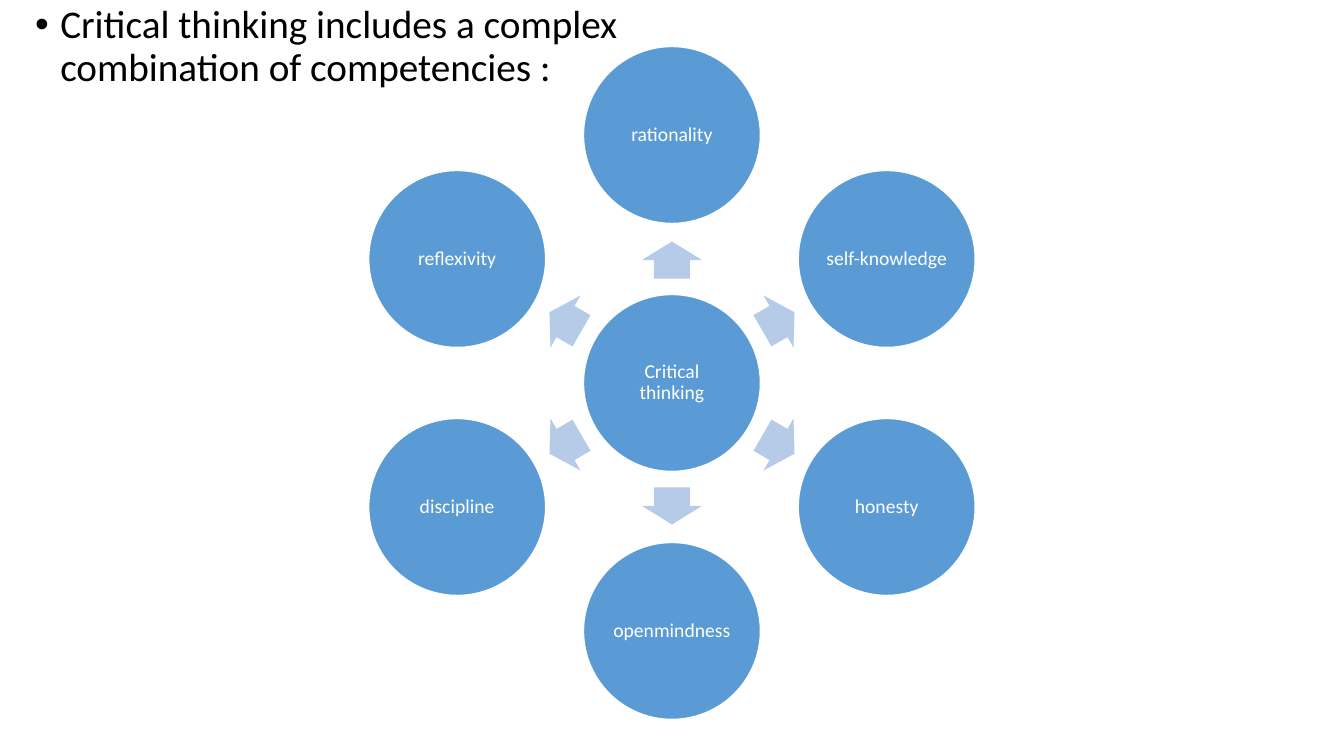
import math

from pptx import Presentation
from pptx import util as u
from pptx.dml.color import RGBColor
from pptx.enum import shapes, text
from pptx.oxml import parse_xml
from pptx.oxml.ns import nsdecls

BLUE = RGBColor(0x5B, 0x9B, 0xD5)
PALE = RGBColor(0xB5, 0xCB, 0xE7)
WHITE = RGBColor(0xFF, 0xFF, 0xFF)
BLACK = RGBColor(0x00, 0x00, 0x00)

WIDE, HIGH = 1344, 756
SCALE = 12192000 / WIDE  # EMU in one px
MID = (672, 383)
DISC = 177  # diameter of a circle
RING = 248  # centre to outer circles
GAP = 123  # centre to arrows
ARROW = (37, 60)
SKILLS = ["rationality", "self-knowledge", "honesty",
          "openmindness", "discipline", "reflexivity"]

LEAD = {"line_spacing": 0.9, "space_before": u.Pt(10)}
LABEL = {"line_spacing": 0.9, "alignment": text.PP_ALIGN.CENTER}
INNER = {"word_wrap": True, "vertical_anchor": text.MSO_ANCHOR.MIDDLE,
         "margin_left": u.Inches(0.02), "margin_right": u.Inches(0.02),
         "margin_top": u.Inches(0.02), "margin_bottom": u.Inches(0.02)}


def px(n):
    return u.Emu(round(n * SCALE))


def apply(item, style):
    for key, value in style.items():
        setattr(item, key, value)


def write(frame, words, style, size, color):
    para = frame.paragraphs[0]
    apply(para, style)
    run = para.add_run()
    run.text = words
    apply(run.font, {"name": "Calibri", "size": u.Pt(size)})
    run.font.color.rgb = color
    return para


def add_lead(slide, words):
    body = slide.placeholders[1]
    apply(body, {"left": px(25), "top": px(0),
                 "width": px(706), "height": px(383)})
    body.text_frame.vertical_anchor = text.MSO_ANCHOR.TOP
    para = write(body.text_frame, words, LEAD, 28, BLACK)
    props = para._p.get_or_add_pPr()
    props.set("marL", str(u.Inches(0.25)))
    props.set("indent", str(-u.Inches(0.25)))
    props.append(parse_xml(f'<a:buChar {nsdecls("a")} char="•"/>'))


def add_form(slide, kind, spot, size, fill):
    """Add a filled preset shape centred on spot."""
    (x, y), (w, h) = spot, size
    form = slide.shapes.add_shape(
        kind, px(x - w / 2), px(y - h / 2), px(w), px(h))
    form.shadow.inherit = False
    form.fill.solid()
    form.fill.fore_color.rgb = fill
    return form


def add_disc(slide, spot, words):
    disc = add_form(slide, shapes.MSO_SHAPE.OVAL, spot, (DISC, DISC), BLUE)
    disc.line.color.rgb = WHITE
    disc.line.width = u.Pt(1)
    apply(disc.text_frame, INNER)
    write(disc.text_frame, words, LABEL, 14, WHITE)


def add_arrow(slide, spot, angle):
    arrow = add_form(slide, shapes.MSO_SHAPE.RIGHT_ARROW, spot, ARROW, PALE)
    arrow.line.fill.background()
    arrow.adjustments[0] = 0.6
    arrow.adjustments[1] = 0.5
    arrow.rotation = angle


def polar(angle, reach):
    turn = math.radians(angle)
    return (MID[0] + reach * math.cos(turn), MID[1] + reach * math.sin(turn))


def main():
    deck = Presentation()
    deck.slide_width, deck.slide_height = px(WIDE), px(HIGH)
    slide = deck.slides.add_slide(deck.slide_layouts[1])
    title = slide.shapes.title.element
    title.getparent().remove(title)

    # Lead sentence
    add_lead(slide, "Critical thinking includes a complex "
                    "combination of competencies :")

    # Hub, then arrows and circles clockwise from the top
    add_disc(slide, MID, "Critical thinking")
    for i, skill in enumerate(SKILLS):
        angle = (270 + i * 360 / len(SKILLS)) % 360
        add_arrow(slide, polar(angle, GAP), angle)
        add_disc(slide, polar(angle, RING), skill)

    deck.save("out.pptx")


if __name__ == "__main__":
    main()
